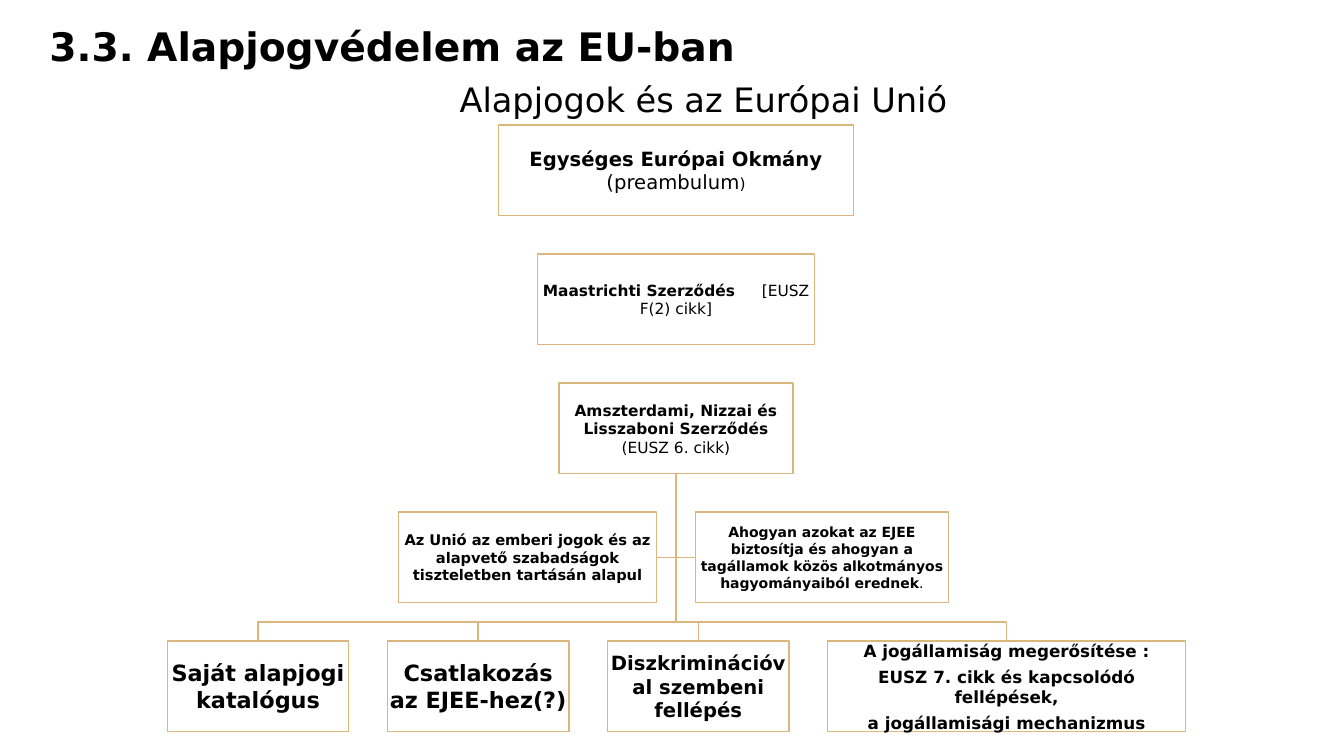
from dataclasses import dataclass

from lxml.etree import SubElement
from pptx import Presentation
from pptx.dml.color import RGBColor
from pptx.enum.shapes import MSO_CONNECTOR as CONN, MSO_SHAPE as SHAPE
from pptx.enum.text import MSO_ANCHOR as ANCHOR, PP_ALIGN as ALIGN
from pptx.oxml.ns import qn
from pptx.util import Inches, Pt


@dataclass(frozen=True)
class Theme:
    font: str = "DejaVu Sans"
    ink: RGBColor = RGBColor(0, 0, 0)
    paper: RGBColor = RGBColor(255, 255, 255)
    gold: RGBColor = RGBColor(0xDB, 0xB6, 0x7E)
    line: float = 1
    title: float = 28
    subtitle: float = 24
    large: float = 16
    medium: float = 14
    normal: float = 12
    small: float = 11
    tiny: float = 10.5
    least: float = 10


# Percentages of the slide's width (horizontal) and height (vertical)
TRUNK = 50.3
COL_LEFT, COL_W, COL_GAP = 12.45, 13.5, 2.88
ROW_TOP, ROW_H, ROW_GAP = 16.53, 12, 5.07


def col(n):
    return COL_LEFT + n * (COL_W + COL_GAP)


def row(n):
    return ROW_TOP + n * (ROW_H + ROW_GAP)


class Chart:
    """Draws the elements of an organisation chart on one slide."""

    def __init__(self, prs, s, theme):
        self.prs, self.s, self.theme = prs, s, theme

    def x(self, share):
        return round(self.prs.slide_width * share / 100)

    def y(self, share):
        return round(self.prs.slide_height * share / 100)

    def place(self, sp, left, top, width, height):
        sp.left, sp.top = self.x(left), self.y(top)
        sp.width, sp.height = self.x(width), self.y(height)

    def style(self, r, size, bold=False):
        f = r.font
        f.name, f.size, f.bold = self.theme.font, Pt(size), bold
        f.color.rgb = self.theme.ink

    def outline(self, sp):
        sp.line.color.rgb = self.theme.gold
        sp.line.width = Pt(self.theme.line)

    def title(self, text, *area):
        sp = self.s.shapes.title
        self.place(sp, *area)
        tf = sp.text_frame
        tf.text = text
        tf.vertical_anchor = ANCHOR.MIDDLE
        p = tf.paragraphs[0]
        p.alignment, p.line_spacing = ALIGN.LEFT, 0.9
        self.style(p.runs[0], self.theme.title, True)

    def subtitle(self, text, *area):
        sp = self.s.shapes.add_textbox(0, 0, 0, 0)
        self.place(sp, *area)
        tf = sp.text_frame
        tf.word_wrap = True
        tf.text = text
        self.style(tf.paragraphs[0].runs[0], self.theme.subtitle)

    def box(self, left, n, width, size, *paragraphs):
        """Box in row n; a paragraph is a list of (text, bold[, size[, spacing]])."""
        sp = self.s.shapes.add_shape(SHAPE.RECTANGLE, 0, 0, 0, 0)
        self.place(sp, left, row(n), width, ROW_H)
        sp.shadow.inherit = False
        sp.fill.solid()
        sp.fill.fore_color.rgb = self.theme.paper
        self.outline(sp)
        tf = sp.text_frame
        tf.word_wrap, tf.vertical_anchor = True, ANCHOR.MIDDLE
        tf.margin_left = tf.margin_right = Inches(0.01)
        tf.margin_top = tf.margin_bottom = Inches(0.01)
        for i, runs in enumerate(paragraphs):
            p = tf.add_paragraph() if i else tf.paragraphs[0]
            p.alignment = ALIGN.CENTER
            if i:
                p.space_before = Pt(0.35 * size)
            for text, bold, *extra in runs:
                r = p.add_run()
                r.text = text
                self.style(r, extra[0] if extra else size, bold)
                if len(extra) > 1:
                    r.font._element.set("spc", str(extra[1] * 100))
        return sp

    def centred(self, n, width, size, *paragraphs):
        return self.box(TRUNK - width / 2, n, width, size, *paragraphs)

    def branch(self, parent, child):
        """Elbow line from the parent's bottom to the child's top."""
        start = parent.left + parent.width // 2, parent.top + parent.height
        end_x = child.left + child.width // 2
        bend_y = child.top - self.y(ROW_GAP / 2)
        fb = self.s.shapes.build_freeform(*start)
        fb.add_line_segments([(start[0], bend_y), (end_x, bend_y),
                              (end_x, child.top)], close=False)
        sp = fb.convert_to_shape()
        sp.shadow.inherit = False
        sp.fill.background()
        self.outline(sp)

    def link(self, left_box, right_box):
        c = self.s.shapes.add_connector(CONN.STRAIGHT, 0, 0, 0, 0)
        c.begin_connect(left_box, 3)
        c.end_connect(right_box, 1)
        self.outline(c)
        SubElement(c._element.spPr, qn("a:effectLst"))


def main():
    prs = Presentation()
    prs.slide_width, prs.slide_height = Inches(13.33), Inches(7.5)
    t = Theme()
    chart = Chart(prs, prs.slides.add_slide(prs.slide_layouts[5]), t)

    chart.title("3.3. Alapjogvédelem az EU-ban", 2.93, -3.73, 80.87, 20.27)
    chart.subtitle("Alapjogok és az Európai Unió", 33.46, 9.73, 38.56, 6.67)

    chart.centred(0, 26.4, t.medium,
                  [("Egységes Európai Okmány ", True), ("(preambulum", False),
                   (")", False, t.small)])
    chart.centred(1, 20.63, t.small,
                  [("Maastrichti Szerződés", True), (" ", True, t.small, 15),
                   ("[EUSZ F(2) cikk]", False)])
    treaties = chart.centred(2, 17.4, t.small,
                             [("Amszterdami, Nizzai és Lisszaboni Szerződés ", True),
                              ("(EUSZ 6. cikk)", False)])

    left_w, right_w = 19.2, 18.83
    union = chart.box(TRUNK - COL_GAP / 2 - left_w, 3, left_w, t.tiny,
                      [("Az Unió az emberi jogok és az alapvető szabadságok "
                        "tiszteletben tartásán alapul", True)])
    convention = chart.box(TRUNK + COL_GAP / 2, 3, right_w, t.least,
                           [("Ahogyan azokat az EJEE biztosítja és ahogyan a "
                             "tagállamok közös alkotmányos hagyományaiból erednek", True),
                            (".", False)])
    chart.link(union, convention)

    outcomes = [
        (COL_W, t.large, ["Saját alapjogi katalógus"]),
        (COL_W, t.large, ["Csatlakozás az EJEE-hez(?)"]),
        (COL_W, t.medium, ["Diszkriminációval szembeni fellépés"]),
        (26.63, t.normal, ["A jogállamiság megerősítése :",
                           "EUSZ 7. cikk és kapcsolódó fellépések,",
                           "a jogállamisági mechanizmus"]),
    ]
    for i, (width, size, lines) in enumerate(outcomes):
        outcome = chart.box(col(i), 4, width, size, *[[(text, True)] for text in lines])
        chart.branch(treaties, outcome)

    prs.save("out.pptx")


if __name__ == "__main__":
    main()
